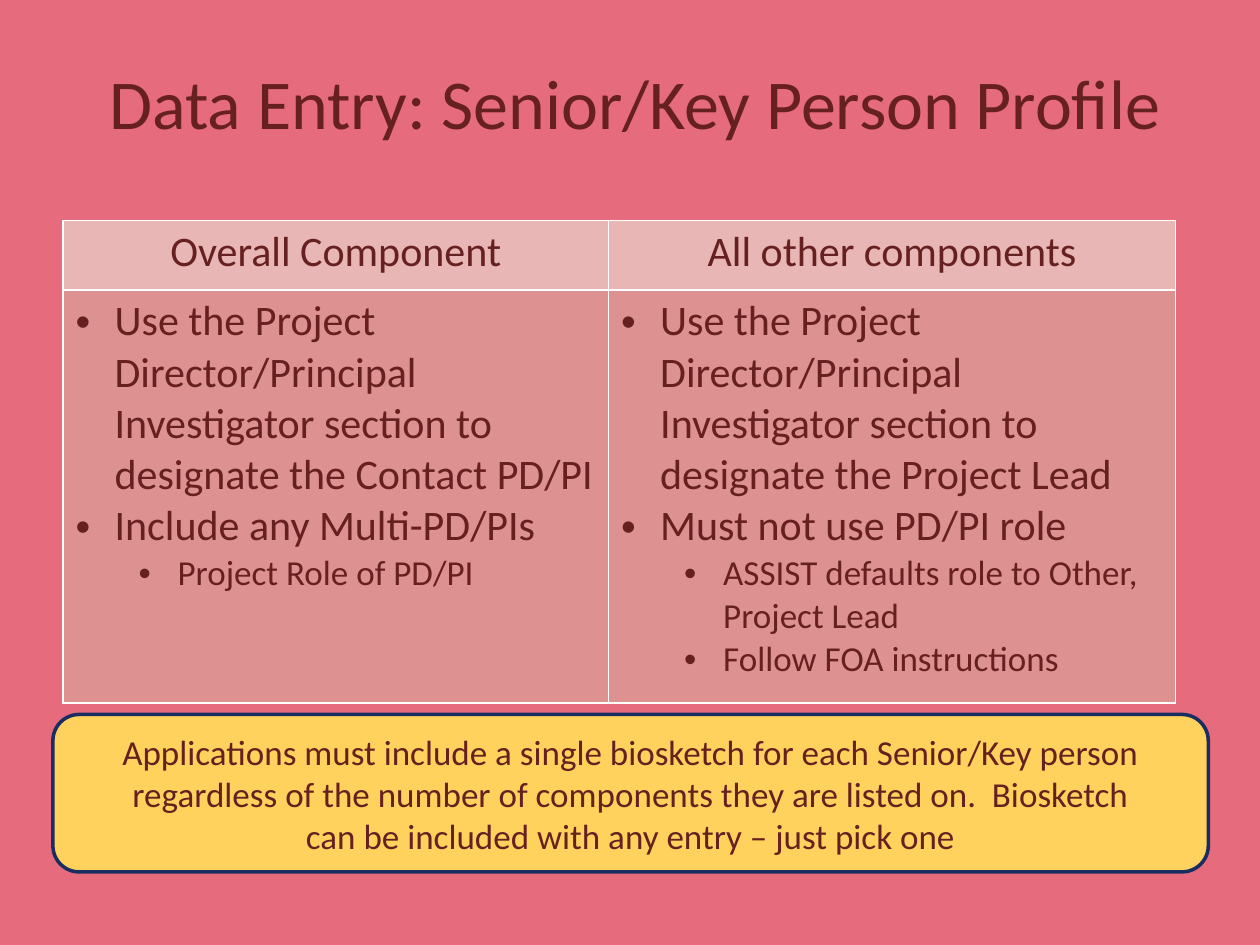
import pptx
import pptx.util
import pptx.dml.color
import pptx.enum.shapes
import pptx.enum.text
import pptx.oxml
import pptx.oxml.ns
from pptx.util import Inches

RGBColor = pptx.dml.color.RGBColor
PINK = RGBColor(0xE6, 0x6C, 0x7D)
MAROON = RGBColor(0x67, 0x20, 0x20)
HEADER = RGBColor(0xE8, 0xB6, 0xB5)
BODY = RGBColor(0xDD, 0x91, 0x91)
YELLOW = RGBColor(0xFF, 0xD2, 0x5D)
NAVY = RGBColor(0x1A, 0x2D, 0x61)
CENTER = pptx.enum.text.PP_ALIGN.CENTER
MIDDLE = pptx.enum.text.MSO_ANCHOR.MIDDLE
NS = pptx.oxml.ns.nsdecls("a")


def write(p, text, size, align=None):
    p.text = text
    p.alignment = align
    for r in p.runs:
        r.font.name = "Calibri"
        r.font.size = pptx.util.Pt(size)
        r.font.color.rgb = MAROON


def style_cell(cell, color):
    cell.fill.solid()
    cell.fill.fore_color.rgb = color
    tcPr = cell._tc.get_or_add_tcPr()
    for i, side in enumerate(("lnL", "lnR", "lnT", "lnB")):
        tcPr.insert(i, pptx.oxml.parse_xml(
            f'<a:{side} {NS} w="12700"><a:solidFill>'
            f'<a:srgbClr val="FFFFFF"/></a:solidFill></a:{side}>'))


prs = pptx.Presentation()
prs.slide_width, prs.slide_height = Inches(10), Inches(7.5)
s = prs.slides.add_slide(prs.slide_layouts[5])
s.background.fill.solid()
s.background.fill.fore_color.rgb = PINK

# Title
sp = s.shapes.title
sp.left, sp.top, sp.width, sp.height = map(Inches, (0.33, 0.42, 9.42, 0.77))
tf = sp.text_frame
tf.word_wrap = True
tf.auto_size = pptx.enum.text.MSO_AUTO_SIZE.SHAPE_TO_FIT_TEXT
tf.vertical_anchor = MIDDLE
write(tf.paragraphs[0], "Data Entry: Senior/Key Person Profile", 40, CENTER)

# Component table: heading, width, bullets as (level, text)
columns = [
    ("Overall Component", 4.33, [
        (0, "Use the Project Director/Principal Investigator section to "
            "designate the Contact PD/PI"),
        (0, "Include any Multi-PD/PIs"),
        (1, "Project Role of PD/PI"),
    ]),
    ("All other components", 4.5, [
        (0, "Use the Project Director/Principal Investigator section to "
            "designate the Project Lead"),
        (0, "Must not use PD/PI role"),
        (1, "ASSIST defaults role to Other, Project Lead"),
        (1, "Follow FOA instructions"),
    ]),
]
table = s.shapes.add_table(2, 2, Inches(0.5), Inches(1.75),
                           Inches(8.83), Inches(3.83)).table
table.rows[0].height, table.rows[1].height = Inches(0.55), Inches(3.28)
for col, (heading, width, bullets) in enumerate(columns):
    table.columns[col].width = Inches(width)
    head, body = table.cell(0, col), table.cell(1, col)
    style_cell(head, HEADER)
    style_cell(body, BODY)
    write(head.text_frame.paragraphs[0], heading, 24, CENTER)
    head.text_frame.paragraphs[0].runs[0].font.bold = False
    tf = body.text_frame
    for i, (level, text) in enumerate(bullets):
        p = tf.add_paragraph() if i else tf.paragraphs[0]
        p.level = level
        pPr = p._p.get_or_add_pPr()
        pPr.set("marL", str(Inches(0.31 + 0.5 * level)))
        pPr.set("indent", str(Inches(-0.31)))
        pPr.append(pptx.oxml.parse_xml(f'<a:buFont {NS} typeface="Arial"/>'))
        pPr.append(pptx.oxml.parse_xml(f'<a:buChar {NS} char="•"/>'))
        write(p, text, 24 - 4 * level)

# Biosketch callout
sp = s.shapes.add_shape(pptx.enum.shapes.MSO_SHAPE.ROUNDED_RECTANGLE,
                        Inches(0.42), Inches(5.67), Inches(9.17), Inches(1.25))
sp.shadow.inherit = False
sp.fill.solid()
sp.fill.fore_color.rgb = YELLOW
sp.line.color.rgb = NAVY
sp.line.width = pptx.util.Pt(2)
tf = sp.text_frame
tf.word_wrap = True
tf.vertical_anchor = MIDDLE
write(tf.paragraphs[0],
      "Applications must include a single biosketch for each Senior/Key person "
      "regardless of the number of components they are listed on.  Biosketch",
      20, CENTER)
write(tf.add_paragraph(), "can be included with any entry – just pick one", 20, CENTER)

prs.save("out.pptx")
